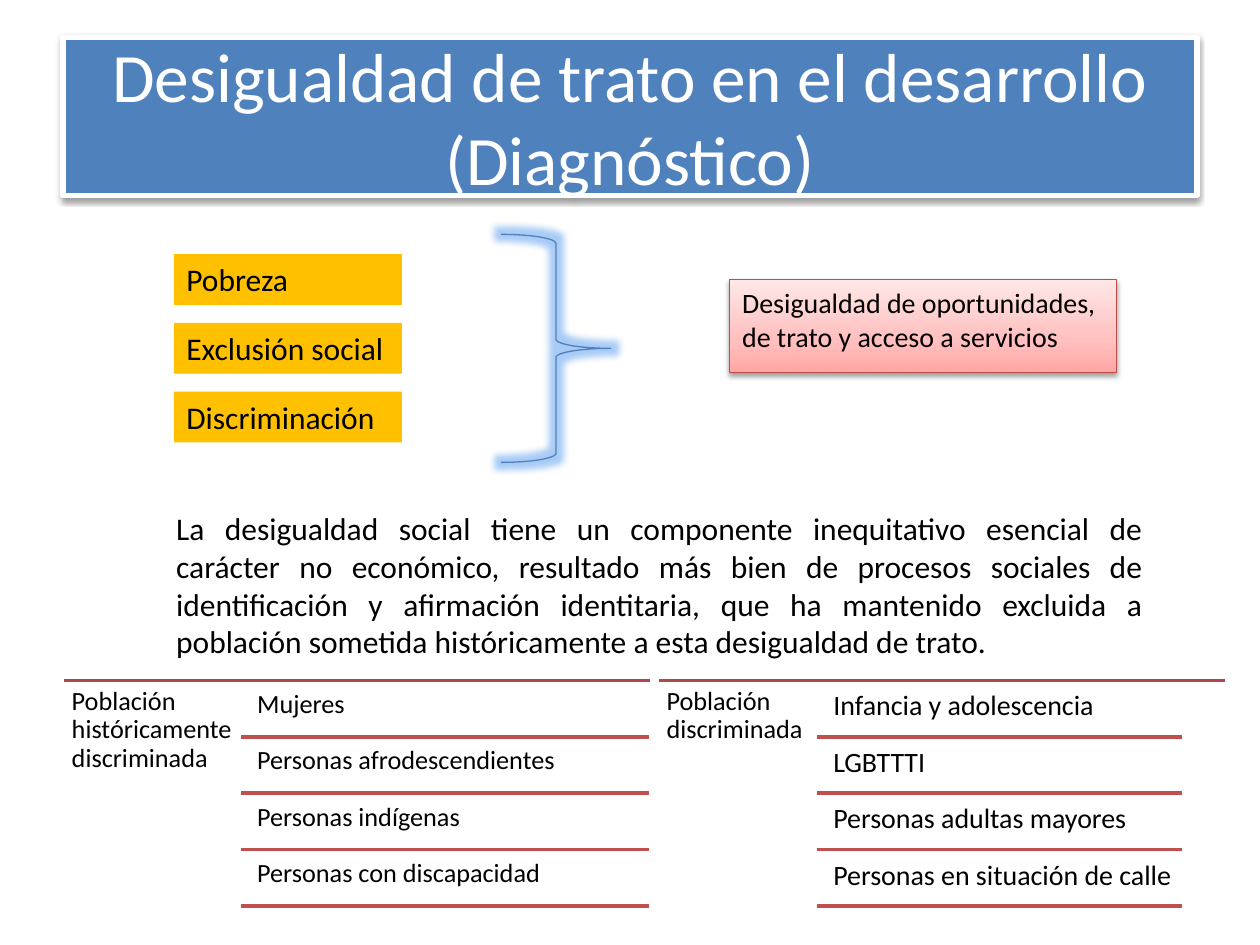
from copy import deepcopy
from dataclasses import dataclass

from lxml import etree
from pptx import Presentation
from pptx import util as u
from pptx.dml.color import RGBColor
from pptx.enum import shapes, text
from pptx.oxml.ns import qn

FONT = "Calibri"
COLORS = {
    "blue": "4F81BD", "glow": "257DE7", "white": "FFFFFF", "black": "000000",
    "amber": "FFC000", "red": "C0504D", "dark_red": "AE4946", "border": "BF4C48",
}
PINK_STOPS = [(0, "FFA6A5"), (0.35, "FFC0BF"), (1, "FFE7E7")]
ROW_TOP, ROW_PITCH, ROW_HEIGHT = 388.8, 32.25, 31


@dataclass
class Box:
    left: float
    top: float
    width: float
    height: float


@dataclass
class Population:
    label: str
    label_box: Box
    rule_end: float
    row_left: float
    row_end: float
    row_inset: float
    row_size: float
    groups: list[str]


def rgb(name: str) -> RGBColor:
    return RGBColor.from_string(COLORS[name])


def place(shape, box: Box) -> None:
    shape.left, shape.top = u.Pt(box.left), u.Pt(box.top)
    shape.width, shape.height = u.Pt(box.width), u.Pt(box.height)


def add_run(paragraph, words: str, size: float, color: str = "black") -> None:
    run = paragraph.add_run()
    run.text = words
    run.font.name = FONT
    run.font.size = u.Pt(size)
    run.font.color.rgb = rgb(color)


def outline(shape, color: str, width: float) -> None:
    shape.line.color.rgb = rgb(color)
    shape.line.width = u.Pt(width)


def add_effect(shape, kind: str, color: str, alpha: int, **settings: int) -> None:
    shape.shadow.inherit = False
    effects = shape._element.spPr.find(qn("a:effectLst"))
    effect = etree.SubElement(effects, qn(f"a:{kind}"))
    for name, value in settings.items():
        effect.set(name, str(value))
    tint = etree.SubElement(effect, qn("a:srgbClr"), val=COLORS[color])
    etree.SubElement(tint, qn("a:alpha"), val=str(alpha * 1000))


def add_shadow(shape) -> None:
    add_effect(shape, "outerShdw", "black", 38, blurRad=u.Pt(3.1),
               dist=u.Pt(1.6), dir=5400000, rotWithShape=0)


def add_text(slide, box: Box, words: str, size: float, inset: float | None = None):
    shape = slide.shapes.add_textbox(0, 0, 0, 0)
    place(shape, box)
    frame = shape.text_frame
    frame.word_wrap = True
    paragraph = frame.paragraphs[0]
    if inset is not None:
        frame.margin_left = frame.margin_right = u.Pt(inset)
        frame.margin_top = frame.margin_bottom = u.Pt(inset)
        paragraph.line_spacing = 0.9
    add_run(paragraph, words, size)
    return shape


def add_rule(slide, start: float, end: float, y: float, color: str) -> None:
    rule = slide.shapes.add_connector(
        shapes.MSO_CONNECTOR.STRAIGHT, u.Pt(start), u.Pt(y), u.Pt(end), u.Pt(y))
    outline(rule, color, 2)
    etree.SubElement(rule._element.spPr, qn("a:effectLst"))


def draw_title(slide) -> None:
    title = slide.shapes.title
    place(title, Box(36, 21.6, 648, 90))
    title.fill.solid()
    title.fill.fore_color.rgb = rgb("blue")
    outline(title, "white", 3)
    add_shadow(title)
    frame = title.text_frame
    frame.auto_size = text.MSO_AUTO_SIZE.NONE
    frame.vertical_anchor = text.MSO_ANCHOR.MIDDLE
    paragraph = frame.paragraphs[0]
    paragraph.alignment = text.PP_ALIGN.CENTER
    add_run(paragraph, "Desigualdad de trato en el desarrollo", 39.6, "white")
    paragraph.add_line_break()
    add_run(paragraph, "(Diagnóstico)", 39.6, "white")


def draw_consequence(slide) -> None:
    body = slide.placeholders[1]
    place(body, Box(416.9, 159.8, 221, 53.3))
    body.fill.gradient()
    body.fill.gradient_angle = 90
    first = body._element.spPr.find(".//" + qn("a:gs"))
    first.addnext(deepcopy(first))
    for stop, (position, color) in zip(body.fill.gradient_stops, PINK_STOPS):
        stop.position = position
        stop.color.rgb = RGBColor.from_string(color)
    outline(body, "border", 0.75)
    add_shadow(body)
    body.text_frame.auto_size = text.MSO_AUTO_SIZE.NONE
    paragraph = body.text_frame.paragraphs[0]
    properties = paragraph._p.get_or_add_pPr()
    properties.set("marL", "0")
    properties.set("indent", "0")
    etree.SubElement(properties, qn("a:buNone"))
    add_run(paragraph, "Desigualdad de oportunidades, de trato y acceso a servicios", 16)


def draw_causes(slide) -> None:
    for index, cause in enumerate(["Pobreza", "Exclusión social", "Discriminación"]):
        shape = add_text(slide, Box(99.4, 145.2 + index * 39.3, 130.3, 29), cause, 18)
        shape.fill.solid()
        shape.fill.fore_color.rgb = rgb("amber")
        shape.text_frame.auto_size = text.MSO_AUTO_SIZE.SHAPE_TO_FIT_TEXT
    brace = slide.shapes.add_shape(shapes.MSO_SHAPE.RIGHT_BRACE, 0, 0, 0, 0)
    place(brace, Box(286.4, 133.9, 62.6, 130.3))
    brace.fill.background()
    outline(brace, "blue", 0.75)
    add_effect(brace, "glow", "glow", 40, rad=u.Pt(8))


def draw_explanation(slide) -> None:
    shape = add_text(
        slide, Box(93.6, 287.3, 566.6, 94.3),
        "La desigualdad social tiene un componente inequitativo esencial de carácter "
        "no económico, resultado más bien de procesos sociales de identificación y "
        "afirmación identitaria, que ha mantenido excluida a población sometida "
        "históricamente a esta desigualdad de trato.", 18)
    shape.text_frame.auto_size = text.MSO_AUTO_SIZE.SHAPE_TO_FIT_TEXT
    shape.text_frame.paragraphs[0].alignment = text.PP_ALIGN.JUSTIFY


def draw_population(slide, population: Population) -> None:
    add_rule(slide, population.label_box.left, population.rule_end, ROW_TOP, "dark_red")
    add_text(slide, population.label_box, population.label, 15, 4.3)
    text_left = population.row_left + 4.8
    for index, group in enumerate(population.groups):
        top = ROW_TOP + index * ROW_PITCH
        row = Box(text_left, top + 1.7, population.rule_end - text_left, ROW_HEIGHT)
        add_text(slide, row, group, population.row_size, population.row_inset)
        add_rule(slide, population.row_left, population.row_end, top + ROW_PITCH, "red")


def main() -> None:
    presentation = Presentation()
    presentation.slide_width, presentation.slide_height = u.Pt(720), u.Pt(540)
    slide = presentation.slides.add_slide(presentation.slide_layouts[1])
    draw_title(slide)
    draw_consequence(slide)
    draw_causes(slide)
    draw_explanation(slide)
    populations = [
        Population("Población históricamente discriminada",
                   Box(36.7, ROW_TOP, 100.8, 130), 371.5, 137.8, 370.8, 4.3, 15,
                   ["Mujeres", "Personas afrodescendientes", "Personas indígenas",
                    "Personas con discapacidad"]),
        Population("Población discriminada",
                   Box(376.6, ROW_TOP, 90.7, 130), 699.8, 466.6, 675.4, 4.8, 16,
                   ["Infancia y adolescencia", "LGBTTTI", "Personas adultas mayores",
                    "Personas en situación de calle"]),
    ]
    for population in populations:
        draw_population(slide, population)
    presentation.save("out.pptx")


if __name__ == "__main__":
    main()
